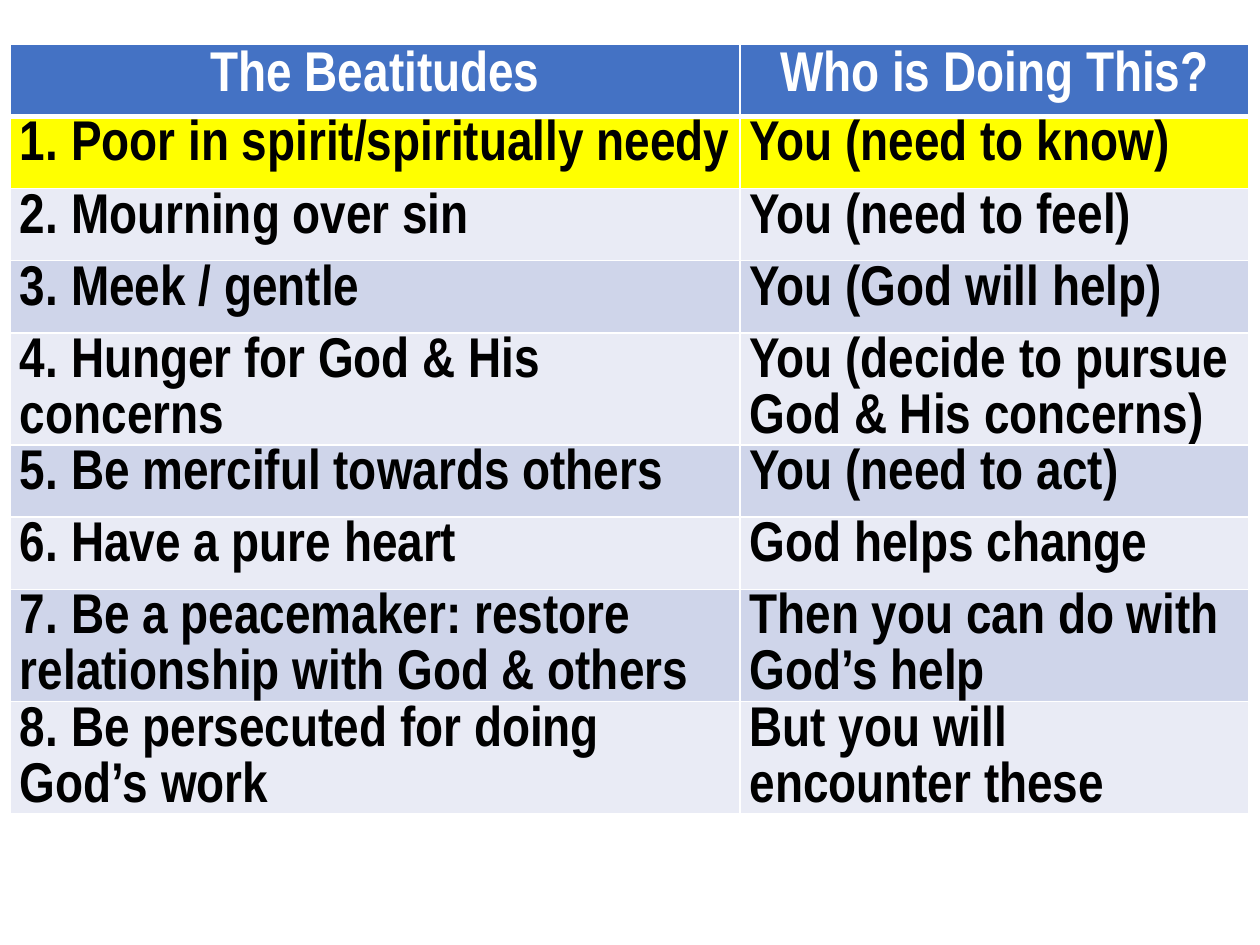
import pptx
import pptx.dml.color
import pptx.enum.text
import pptx.oxml
import pptx.oxml.ns
import pptx.util

Pt = pptx.util.Pt
ALIGN = pptx.enum.text.PP_ALIGN

# Content
HEADER = ("The Beatitudes", "Who is Doing This?")
BEATITUDES = [
    ("1. Poor in spirit/spiritually needy", "You (need to know)"),
    ("2. Mourning over sin", "You (need to feel)"),
    ("3. Meek / gentle", "You (God will help)"),
    ("4. Hunger for God & His concerns", "You (decide to pursue God & His concerns)"),
    ("5. Be merciful towards others", "You (need to act)"),
    ("6. Have a pure heart", "God helps change"),
    ("7. Be a peacemaker: restore relationship with God & others",
     "Then you can do with God’s help"),
    ("8. Be persecuted for doing God’s work", "But you will encounter these"),
]

# Layout and colours
LEFT, TOP = 6, 25.4
COLUMN_WIDTHS = (416.9, 290.9)
ROW_HEIGHT = 41.2
HEADER_FILL, HIGHLIGHT = "4472C4", "FFFF00"
BANDS = ("CFD5EA", "E9EBF5")
WHITE, BLACK = "FFFFFF", "000000"


def rgb(value):
    return pptx.dml.color.RGBColor.from_string(value)


def write_text(cell, text, color=BLACK, size=32, font="Arial Narrow",
               align=ALIGN.LEFT, line_spacing=None):
    paragraph = cell.text_frame.paragraphs[0]
    paragraph.alignment = align
    if line_spacing:
        paragraph.line_spacing = line_spacing
    run = paragraph.add_run()
    run.text = text
    run.font.name = font
    run.font.size = Pt(size)
    run.font.bold = True
    run.font.color.rgb = rgb(color)


def set_borders(cell, bottom=1, top=1):
    properties = cell._tc.get_or_add_tcPr()
    sides = (("lnL", 1), ("lnR", 1), ("lnT", top), ("lnB", bottom))
    for index, (side, width) in enumerate(sides):
        line = pptx.oxml.parse_xml(
            f'<a:{side} {pptx.oxml.ns.nsdecls("a")} w="{Pt(width)}">'
            f'<a:solidFill><a:srgbClr val="{WHITE}"/></a:solidFill></a:{side}>')
        properties.insert(index, line)


def fill_cell(cell, color):
    cell.fill.solid()
    cell.fill.fore_color.rgb = rgb(color)


presentation = pptx.Presentation()
presentation.slide_width, presentation.slide_height = Pt(720), Pt(540)
slide = presentation.slides.add_slide(presentation.slide_layouts[6])

# Table grid
row_count = len(BEATITUDES) + 1
table = slide.shapes.add_table(
    row_count, len(HEADER), Pt(LEFT), Pt(TOP),
    Pt(sum(COLUMN_WIDTHS)), Pt(ROW_HEIGHT * row_count)).table
for column, width in zip(table.columns, COLUMN_WIDTHS):
    column.width = Pt(width)
for row in table.rows:
    row.height = Pt(ROW_HEIGHT)

# Header row
for column, text in enumerate(HEADER):
    cell = table.cell(0, column)
    write_text(cell, text, color=WHITE, align=ALIGN.CENTER)
    fill_cell(cell, HEADER_FILL)
    set_borders(cell, bottom=3)

# Banded body rows, the first one highlighted
for number, texts in enumerate(BEATITUDES, start=1):
    for column, text in enumerate(texts):
        cell = table.cell(number, column)
        cell.margin_left = cell.margin_right = Pt(5.4)
        cell.margin_top = cell.margin_bottom = 0
        write_text(cell, text, line_spacing=1.07)
        fill_cell(cell, HIGHLIGHT if number == 1 else BANDS[(number + 1) % 2])
        set_borders(cell, top=3 if number == 1 else 1)

presentation.save("out.pptx")
